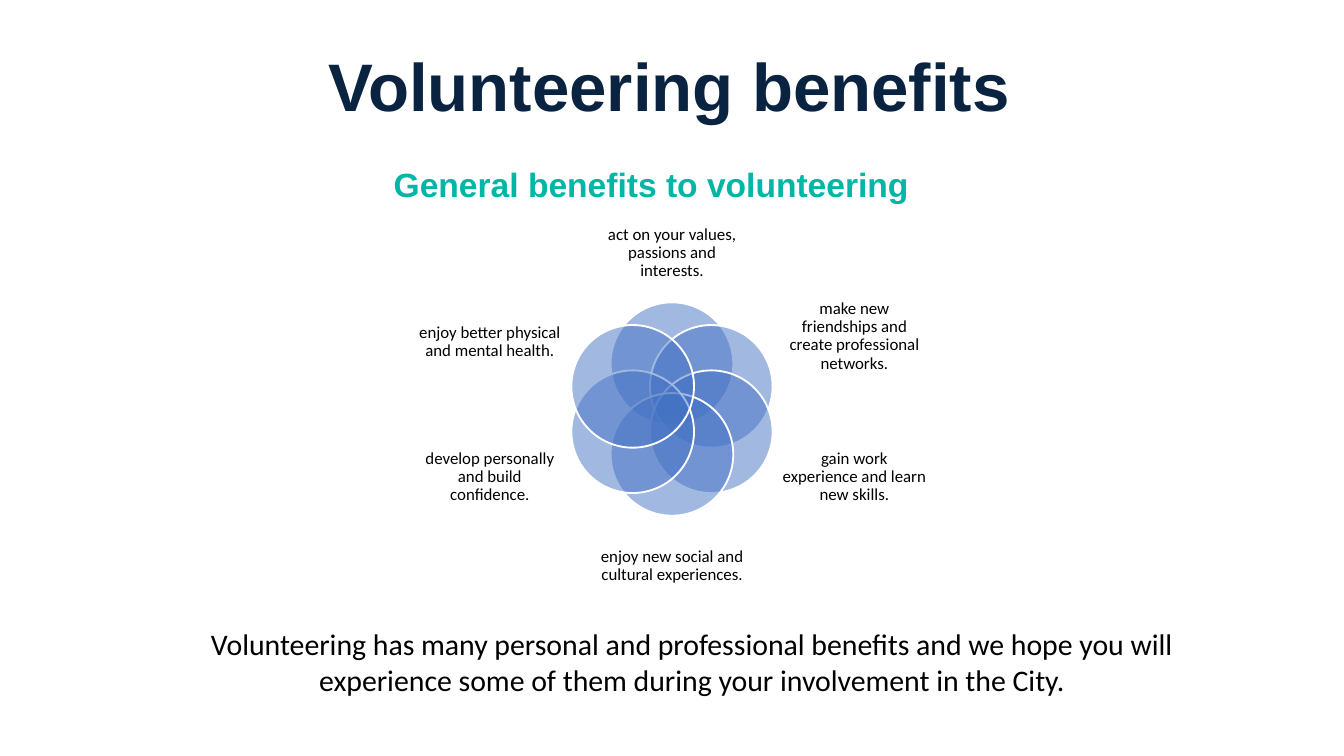
from dataclasses import dataclass
from math import cos, radians, sin

from lxml.etree import SubElement
from pptx import Presentation
from pptx.dml.color import RGBColor
from pptx.enum.shapes import MSO_SHAPE
from pptx.enum.text import MSO_ANCHOR, MSO_AUTO_SIZE, PP_ALIGN
from pptx.oxml.ns import qn
from pptx.util import Pt


@dataclass(frozen=True)
class Theme:
    navy: str = "092340"
    teal: str = "01B6A7"
    petal: str = "4472C4"
    outline: str = "FFFFFF"
    ink: str = "000000"
    heading_font: str = "Arial"
    body_font: str = "Calibri"
    title_size: int = 36
    subtitle_size: int = 18
    closing_size: int = 16
    label_size: int = 9


THEME = Theme()
PX = 5715


def place(box, left, top, width, height):
    bounds = {"left": left, "top": top, "width": width, "height": height}
    for key, value in bounds.items():
        setattr(box, key, round(value * PX))


def write(box, text, size, color, font_name, bold, frame_format, paragraph_format):
    frame = box.text_frame
    frame.text = text
    paragraph = frame.paragraphs[0]
    font_format = {"size": Pt(size), "name": font_name, "bold": bold}
    frame_defaults = {"word_wrap": True, "auto_size": MSO_AUTO_SIZE.NONE}
    for target, values in (
        (frame, frame_defaults | frame_format),
        (paragraph, paragraph_format),
        (paragraph.font, font_format),
    ):
        for key, value in values.items():
            setattr(target, key, value)
    paragraph.font.color.rgb = RGBColor.from_string(color)


presentation = Presentation()
presentation.slide_width = 1600 * PX
presentation.slide_height = 900 * PX
slide = presentation.slides.add_slide(presentation.slide_layouts[5])

top_anchor = {"vertical_anchor": MSO_ANCHOR.TOP}
left_aligned = {"alignment": PP_ALIGN.LEFT}
centred = {"alignment": PP_ALIGN.CENTER}

title = slide.shapes.title
place(title, 375, 45, 944, 114)
write(title, "Volunteering benefits", THEME.title_size, THEME.navy,
      THEME.heading_font, True, top_anchor, left_aligned)

subtitle = slide.shapes.add_textbox(0, 0, 0, 0)
place(subtitle, 453, 187, 648, 64)
write(subtitle, "General benefits to volunteering", THEME.subtitle_size, THEME.teal,
      THEME.heading_font, True, top_anchor, left_aligned)

benefits = [
    ("act on your values, passions and interests.", (709, 252, 182, 99)),
    ("make new friendships and create professional networks.", (931, 346, 172, 109)),
    ("gain work experience and learn new skills.", (931, 507, 172, 122)),
    ("enjoy new social and cultural experiences.", (709, 624, 182, 99)),
    ("develop personally and build confidence.", (497, 507, 172, 122)),
    ("enjoy better physical and mental health.", (497, 346, 172, 122)),
]
label_frame = {"vertical_anchor": MSO_ANCHOR.MIDDLE, "margin_left": 0,
               "margin_top": 0, "margin_right": 0, "margin_bottom": 0}
label_paragraph = centred | {"line_spacing": 0.9}
center_x, center_y, orbit, diameter = 800, 487, 54, 146
flower = slide.shapes.add_group_shape()

for index, (benefit, label_bounds) in enumerate(benefits):
    angle = radians(index * 360 / len(benefits) - 90)
    petal = flower.shapes.add_shape(MSO_SHAPE.OVAL, 0, 0, 0, 0)
    place(petal, center_x + orbit * cos(angle) - diameter / 2,
          center_y + orbit * sin(angle) - diameter / 2, diameter, diameter)
    petal.shadow.inherit = False
    petal.fill.solid()
    petal.fill.fore_color.rgb = RGBColor.from_string(THEME.petal)
    petal_color = petal.fill._xPr.find(qn("a:solidFill"))[0]
    SubElement(petal_color, qn("a:alpha"), val="50000")
    petal.line.color.rgb = RGBColor.from_string(THEME.outline)
    petal.line.width = Pt(1)

    label = flower.shapes.add_textbox(0, 0, 0, 0)
    place(label, *label_bounds)
    write(label, benefit, THEME.label_size, THEME.ink,
          THEME.body_font, False, label_frame, label_paragraph)

closing = slide.shapes.add_textbox(0, 0, 0, 0)
place(closing, 163, 737, 1322, 102)
write(closing,
      "Volunteering has many personal and professional benefits and we hope you will "
      "experience some of them during your involvement in the City.",
      THEME.closing_size, THEME.ink, THEME.body_font, False, top_anchor,
      centred | {"space_after": Pt(3)})

presentation.save("out.pptx")
